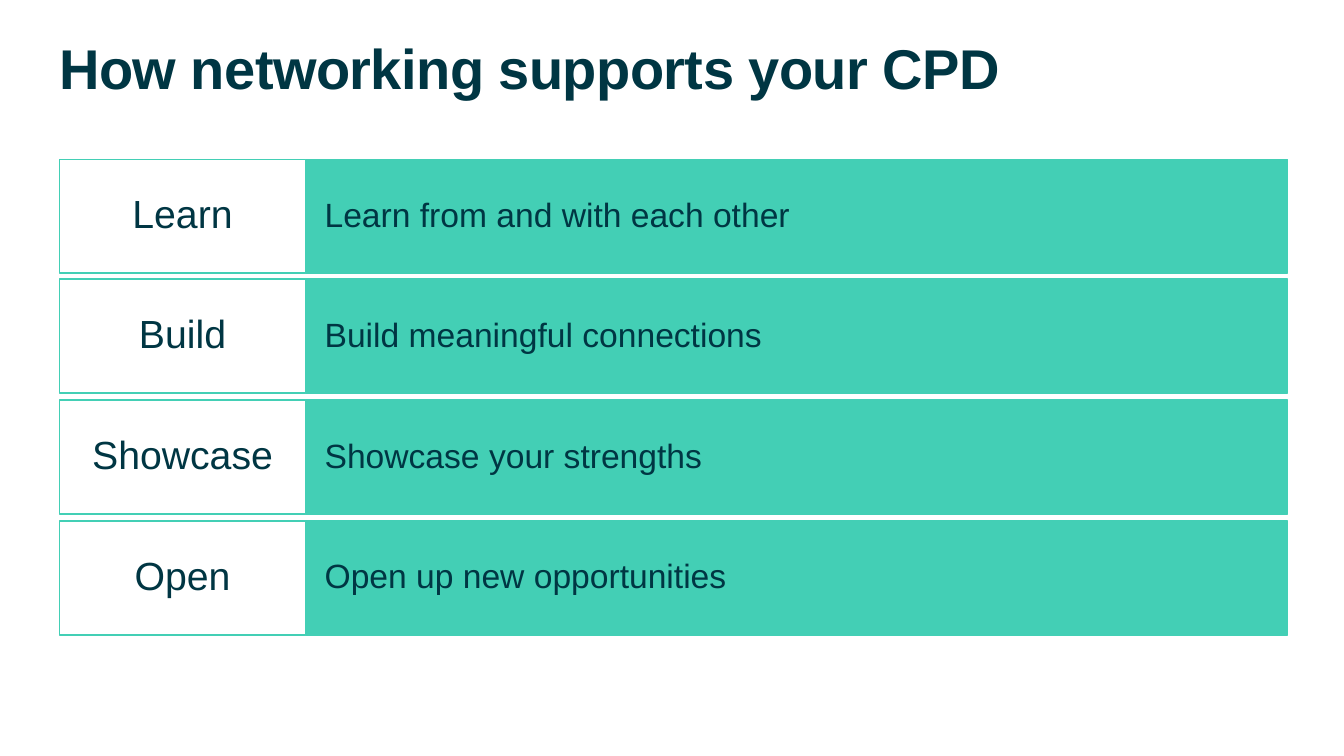
import dataclasses

import pptx
import pptx.dml.color
import pptx.enum.shapes
import pptx.enum.text
import pptx.util

PX = 9144
ALIGN = pptx.enum.text.PP_ALIGN
ANCHOR = pptx.enum.text.MSO_ANCHOR


@dataclasses.dataclass(frozen=True)
class Theme:
    font: str = "Arial"
    ink: str = "003643"
    teal: str = "43CFB5"
    white: str = "FFFFFF"
    title: int = 40
    label: int = 28
    body: int = 24
    line: int = 1


def rgb(value):
    return pptx.dml.color.RGBColor.from_string(value)


def apply(target, values):
    for name, value in values.items():
        setattr(target, name, value)


class Deck:
    """Draws themed elements on the current slide, with lengths in px."""

    def __init__(self, theme, width, height):
        self.theme = theme
        self.prs = pptx.Presentation()
        apply(self.prs, {"slide_width": width * PX, "slide_height": height * PX})
        self.s = None

    def slide(self):
        self.s = self.prs.slides.add_slide(self.prs.slide_layouts[6])

    def text(self, sp, text, size, align, anchor, inset_x, inset_y, bold=False):
        tf = sp.text_frame
        apply(tf, {
            "word_wrap": True,
            "vertical_anchor": anchor,
            "margin_left": inset_x * PX,
            "margin_right": inset_x * PX,
            "margin_top": inset_y * PX,
            "margin_bottom": inset_y * PX,
        })
        p = tf.paragraphs[0]
        apply(p, {"alignment": align, "line_spacing": 0.9})
        r = p.add_run()
        r.text = text
        apply(r.font, {
            "name": self.theme.font,
            "size": pptx.util.Pt(size),
            "bold": bold,
        })
        r.font.color.rgb = rgb(self.theme.ink)
        return r

    def title(self, text, x, y, w, h):
        sp = self.s.shapes.add_textbox(x * PX, y * PX, w * PX, h * PX)
        r = self.text(sp, text, self.theme.title, ALIGN.LEFT, ANCHOR.TOP, 0, 0, True)
        r._r.get_or_add_rPr().set("spc", "-40")

    def box(self, text, x, y, w, h, fill, size, align, inset_x, inset_y):
        kind = pptx.enum.shapes.MSO_SHAPE.RECTANGLE
        sp = self.s.shapes.add_shape(kind, x * PX, y * PX, w * PX, h * PX)
        sp.shadow.inherit = False
        sp.fill.solid()
        sp.fill.fore_color.rgb = rgb(fill)
        sp.line.color.rgb = rgb(self.theme.teal)
        sp.line.width = pptx.util.Pt(self.theme.line)
        self.text(sp, text, size, align, ANCHOR.MIDDLE, inset_x, inset_y)


ROWS = [
    ("Learn", "Learn from and with each other"),
    ("Build", "Build meaningful connections"),
    ("Showcase", "Showcase your strengths"),
    ("Open", "Open up new opportunities"),
]
LEFT, TOP, BOTTOM = 59, 158, 630
LABEL_W, BODY_W, ROW_H = 244, 974, 113


def main():
    theme = Theme()
    deck = Deck(theme, 1333, 750)
    deck.slide()
    deck.title("How networking supports your CPD", LEFT, 41, LABEL_W + BODY_W, 79)
    travel = BOTTOM - ROW_H - TOP
    for i, (label, body) in enumerate(ROWS):
        y = TOP + i * travel // (len(ROWS) - 1)
        deck.box(body, LEFT + LABEL_W, y, BODY_W, ROW_H,
                 theme.teal, theme.body, ALIGN.LEFT, 19, 29)
        deck.box(label, LEFT, y, LABEL_W, ROW_H,
                 theme.white, theme.label, ALIGN.CENTER, 13, 11)
    deck.prs.save("out.pptx")


if __name__ == "__main__":
    main()
